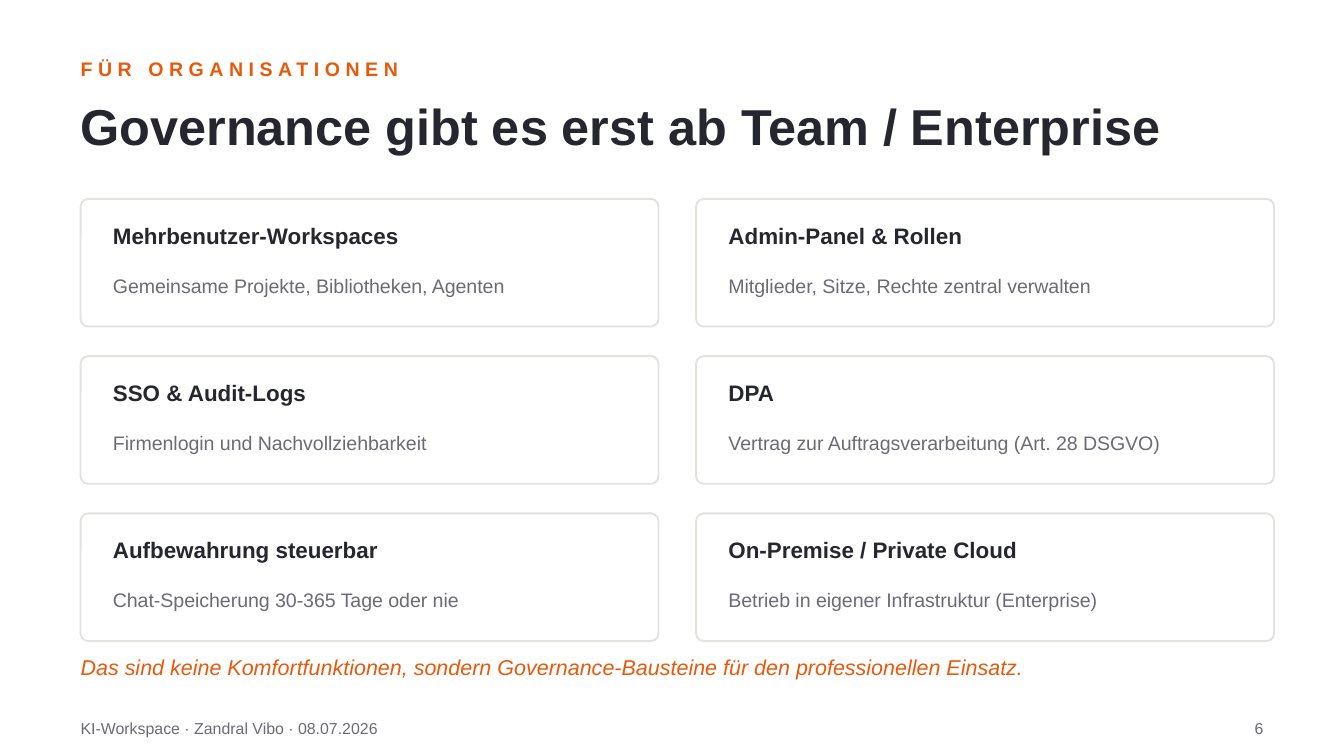
from pptx import Presentation
from pptx.dml.color import RGBColor
from pptx.enum.shapes import MSO_SHAPE as Shape
from pptx.enum.text import MSO_ANCHOR as Anchor, PP_ALIGN as Align
from pptx.util import Inches, Pt

ORANGE = RGBColor(0xE8, 0x59, 0x0C)
INK = RGBColor(0x26, 0x26, 0x2E)
GREY = RGBColor(0x6B, 0x6B, 0x75)
BORDER = RGBColor(0xE4, 0xE2, 0xDF)
WHITE = RGBColor(0xFF, 0xFF, 0xFF)

UNIT = Inches(0.1)  # one grid column and one grid row
MARGIN = 6
CONTENT_WIDTH = 88
CARD_TOP, CARD_WIDTH, CARD_HEIGHT = 14.8, 43, 9.5
COLUMN_STEP, ROW_STEP = 45.8, 11.7
PADDING = 2.4

CARDS = [
    ("Mehrbenutzer-Workspaces", "Gemeinsame Projekte, Bibliotheken, Agenten"),
    ("Admin-Panel & Rollen", "Mitglieder, Sitze, Rechte zentral verwalten"),
    ("SSO & Audit-Logs", "Firmenlogin und Nachvollziehbarkeit"),
    ("DPA", "Vertrag zur Auftragsverarbeitung (Art. 28 DSGVO)"),
    ("Aufbewahrung steuerbar", "Chat-Speicherung 30-365 Tage oder nie"),
    ("On-Premise / Private Cloud", "Betrieb in eigener Infrastruktur (Enterprise)"),
]


class SlideBuilder:
    """Holds the style and the slide; lengths are in grid units."""

    font_name = "Arial"

    def __init__(self, slide):
        self.slide = slide

    def place(self, *lengths):
        return [round(length * UNIT) for length in lengths]

    def text(self, words, left, top, width, height, size, color,
             bold=False, italic=False, align=Align.LEFT, spacing=None):
        box = self.slide.shapes.add_textbox(*self.place(left, top, width, height))
        frame = box.text_frame
        frame.margin_left = frame.margin_right = 0
        frame.margin_top = frame.margin_bottom = 0
        frame.word_wrap = True
        frame.vertical_anchor = Anchor.MIDDLE
        frame.text = words
        para = frame.paragraphs[0]
        para.alignment = align
        span = para.runs[0]
        span.font.name = self.font_name
        span.font.size = Pt(size)
        span.font.bold = bold
        span.font.italic = italic
        span.font.color.rgb = color
        if spacing:
            span.font._element.set("spc", str(spacing * 100))

    def card(self, heading, detail, left, top):
        panel = self.slide.shapes.add_shape(
            Shape.ROUNDED_RECTANGLE, *self.place(left, top, CARD_WIDTH, CARD_HEIGHT))
        panel.adjustments[0] = 0.06
        panel.shadow.inherit = False
        panel.fill.solid()
        panel.fill.fore_color.rgb = WHITE
        panel.line.color.rgb = BORDER
        panel.line.width = Pt(1)
        text_left, text_width = left + PADDING, CARD_WIDTH - 2 * PADDING
        self.text(heading, text_left, top + 1.2, text_width, 3, 12, INK, bold=True)
        self.text(detail, text_left, top + 4.2, text_width, 4.5, 10.5, GREY)


def main():
    deck = Presentation()
    deck.slide_width = Inches(10)
    deck.slide_height = deck.slide_width * 9 // 16
    page = SlideBuilder(deck.slides.add_slide(deck.slide_layouts[6]))

    page.text("FÜR ORGANISATIONEN", MARGIN, 3.8, CONTENT_WIDTH, 2.6,
              10.5, ORANGE, bold=True, spacing=3)
    page.text("Governance gibt es erst ab Team / Enterprise",
              MARGIN, 6.2, CONTENT_WIDTH, 6.2, 27, INK, bold=True)

    for index, (heading, detail) in enumerate(CARDS):
        row, column = divmod(index, 2)
        page.card(heading, detail,
                  MARGIN + column * COLUMN_STEP, CARD_TOP + row * ROW_STEP)

    page.text("Das sind keine Komfortfunktionen, sondern Governance-Bausteine "
              "für den professionellen Einsatz.",
              MARGIN, 48, CONTENT_WIDTH, 3.2, 11.5, ORANGE, italic=True)
    page.text("KI-Workspace · Zandral Vibo · 08.07.2026",
              MARGIN, 53, 60, 2.4, 8.5, GREY)
    page.text("6", 88, 53, 6, 2.4, 8.5, GREY, align=Align.RIGHT)

    deck.save("out.pptx")


if __name__ == "__main__":
    main()
